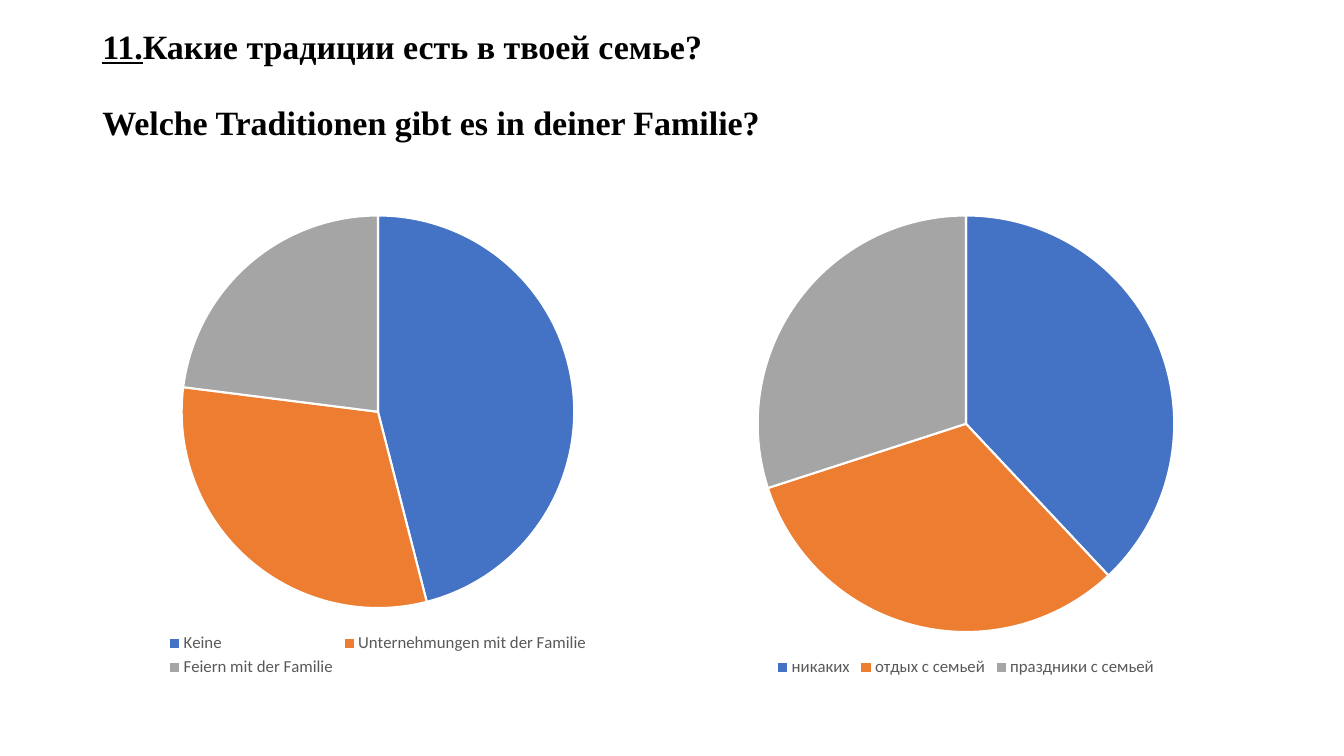
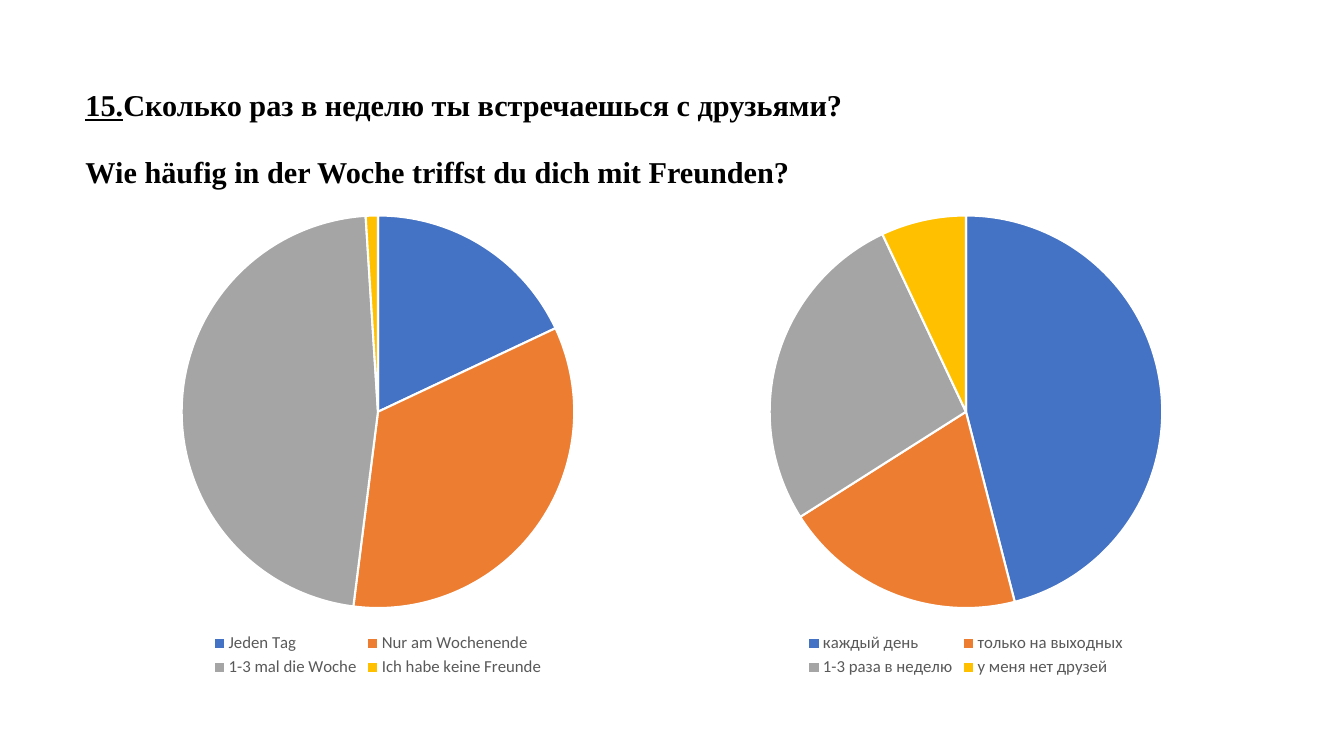
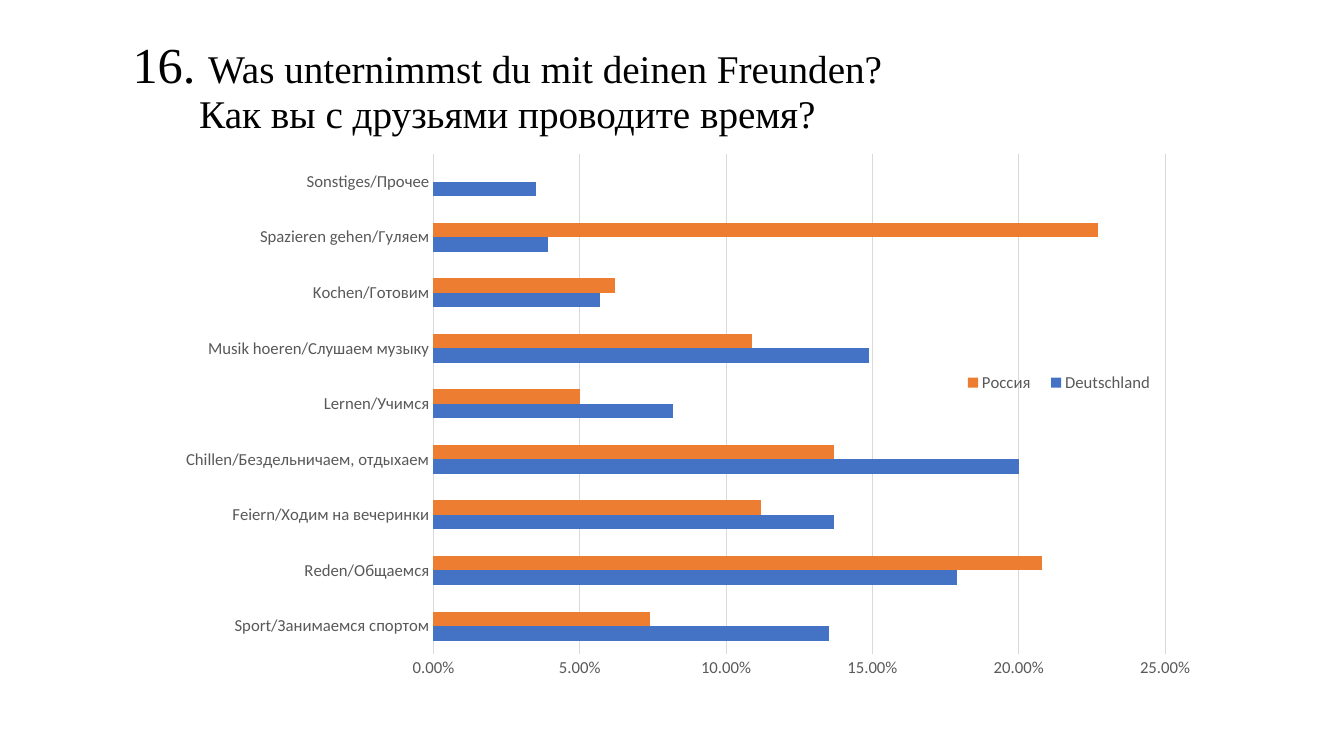
from lxml.etree import SubElement
from pptx import Presentation
from pptx.chart.data import CategoryChartData
from pptx.dml.color import RGBColor
from pptx.enum.chart import XL_CHART_TYPE, XL_LEGEND_POSITION, XL_TICK_MARK
from pptx.enum.text import MSO_ANCHOR, PP_ALIGN
from pptx.oxml.ns import qn
from pptx.util import Inches, Pt

COLORS = {
    "black": "000000", "white": "FFFFFF", "label": "595959", "grid": "D9D9D9",
    "blue": "4472C4", "orange": "ED7D31", "gray": "A5A5A5", "gold": "FFC000",
}
RGB = {name: RGBColor.from_string(value) for name, value in COLORS.items()}
SLICES = ["blue", "orange", "gray", "gold"]
TITLE_FONT, CHART_FONT = "Times New Roman", "Calibri"
U = Inches(1) // 12

prs = Presentation()
prs.slide_width, prs.slide_height = 160 * U, 90 * U


def add_title(s, left, top, width, lines, gap, align=PP_ALIGN.LEFT):
    sp = s.shapes.add_textbox(int(left * U), int(top * U), int(width * U), 14 * U)
    tf = sp.text_frame
    tf.word_wrap = True
    tf.vertical_anchor = MSO_ANCHOR.TOP
    for i, runs in enumerate(lines):
        p = tf.paragraphs[0] if i == 0 else tf.add_paragraph()
        p.alignment = align
        p.line_spacing = 0.9
        p.space_before = Pt(gap if i else 0)
        for text, size, bold, underline in runs:
            r = p.add_run()
            r.text = text
            r.font.name, r.font.size = TITLE_FONT, Pt(size)
            r.font.bold, r.font.underline = bold, underline
            r.font.color.rgb = RGB["black"]


def add_chart(s, kind, box, cats, series, number_format="General"):
    data = CategoryChartData(number_format=number_format)
    data.categories = cats
    for name, values in series:
        data.add_series(name, values)
    chart = s.shapes.add_chart(kind, *[int(n * U) for n in box], data).chart
    chart.has_title = False
    chart.font.name, chart.font.size = CHART_FONT, Pt(12)
    chart.font.color.rgb = RGB["label"]
    chart.has_legend = True
    chart.legend.position = XL_LEGEND_POSITION.BOTTOM
    chart.legend.include_in_layout = False
    return chart


pie_slides = [
    (11, 3, 24.3, 28, "11.", "Какие традиции есть в твоей семье?",
     "Welche Traditionen gibt es in deiner Familie?",
     [(["Keine", "Unternehmungen mit der Familie", "Feiern mit der Familie"], [46, 31, 23]),
      (["никаких", "отдых с семьей", "праздники с семьей"], [38, 32, 30])]),
    (9, 10.2, 21.6, 24, "15.", "Сколько раз в неделю ты встречаешься с друзьями?",
     "Wie häufig in der Woche triffst du dich mit Freunden?",
     [(["Jeden Tag", "Nur am Wochenende", "1-3 mal die Woche", "Ich habe keine Freunde"],
       [18, 34, 47, 1]),
      (["каждый день", "только на выходных", "1-3 раза в неделю", "у меня нет друзей"],
       [46, 20, 27, 7])]),
]

for left, top, size, gap, number, russian, german, pies in pie_slides:
    s = prs.slides.add_slide(prs.slide_layouts[6])
    lines = [[(number, size, True, True), (russian, size, True, False)],
             [(german, size, True, False)]]
    add_title(s, left, top, 138, lines, gap)
    for i, (cats, values) in enumerate(pies):
        chart = add_chart(s, XL_CHART_TYPE.PIE, (11 + 70 * i, 24, 68, 57.1), cats,
                          [("Series 1", values)])
        plot = chart.plots[0]
        plot.vary_by_categories = True
        for j in range(len(cats)):
            fmt = plot.series[0].points[j].format
            fmt.fill.solid()
            fmt.fill.fore_color.rgb = RGB[SLICES[j]]
            fmt.line.color.rgb = RGB["white"]
            fmt.line.width = Pt(1.5)

s = prs.slides.add_slide(prs.slide_layouts[6])
add_title(s, 6, 4.2, 108.8,
          [[("16. ", 36, False, False),
            ("Was unternimmst du mit deinen Freunden?", 28, False, False)],
           [("Как вы с друзьями проводите время?", 28, False, False)]],
          0, PP_ALIGN.CENTER)

activities = [
    ("Sport/Занимаемся спортом", 0.135, 0.074),
    ("Reden/Общаемся", 0.179, 0.208),
    ("Feiern/Ходим на вечеринки", 0.137, 0.112),
    ("Chillen/Бездельничаем, отдыхаем", 0.2, 0.137),
    ("Lernen/Учимся", 0.082, 0.05),
    ("Musik hoeren/Слушаем музыку", 0.149, 0.109),
    ("Kochen/Готовим", 0.057, 0.062),
    ("Spazieren gehen/Гуляем", 0.039, 0.227),
    ("Sonstiges/Прочее", 0.035, None),
]
cats, germany, russia = zip(*activities)
chart = add_chart(s, XL_CHART_TYPE.BAR_CLUSTERED, (15, 18.25, 126.7, 63.4), cats,
                  [("Deutschland", germany), ("Россия", russia)], "0.00%")
plot = chart.plots[0]
plot.gap_width = 182
plot.vary_by_categories = False
for series, color in zip(plot.series, SLICES):
    series.format.fill.solid()
    series.format.fill.fore_color.rgb = RGB[color]

cat_axis, val_axis = chart.category_axis, chart.value_axis
for axis in (cat_axis, val_axis):
    axis.major_tick_mark = axis.minor_tick_mark = XL_TICK_MARK.NONE
val_axis.minimum_scale, val_axis.maximum_scale, val_axis.major_unit = 0, 0.25, 0.05
val_axis.tick_labels.number_format = "0.00%"
val_axis.tick_labels.number_format_is_linked = False
val_axis.format.line.fill.background()
for line in (cat_axis.format.line, val_axis.major_gridlines.format.line):
    line.color.rgb = RGB["grid"]
    line.width = Pt(0.75)

plot_area = chart._chartSpace.chart.plotArea
for old in plot_area.findall(qn("c:layout")):
    plot_area.remove(old)
legend = chart.legend._element
for old in legend.findall(qn("c:layout")):
    legend.remove(old)
layouts = [(plot_area, 0, "inner", (0.29, 0, 0.69, 0.94)),
           (legend, 1, None, (0.78, 0.4, 0.2, 0.06))]
for parent, index, target, shares in layouts:
    layout = SubElement(parent, qn("c:layout"))
    parent.insert(index, layout)
    manual = SubElement(layout, qn("c:manualLayout"))
    if target:
        SubElement(manual, qn("c:layoutTarget")).set("val", target)
    for tag in ("xMode", "yMode"):
        SubElement(manual, qn("c:" + tag)).set("val", "edge")
    for tag, share in zip("xywh", shares):
        SubElement(manual, qn("c:" + tag)).set("val", str(share))

prs.save("out.pptx")
